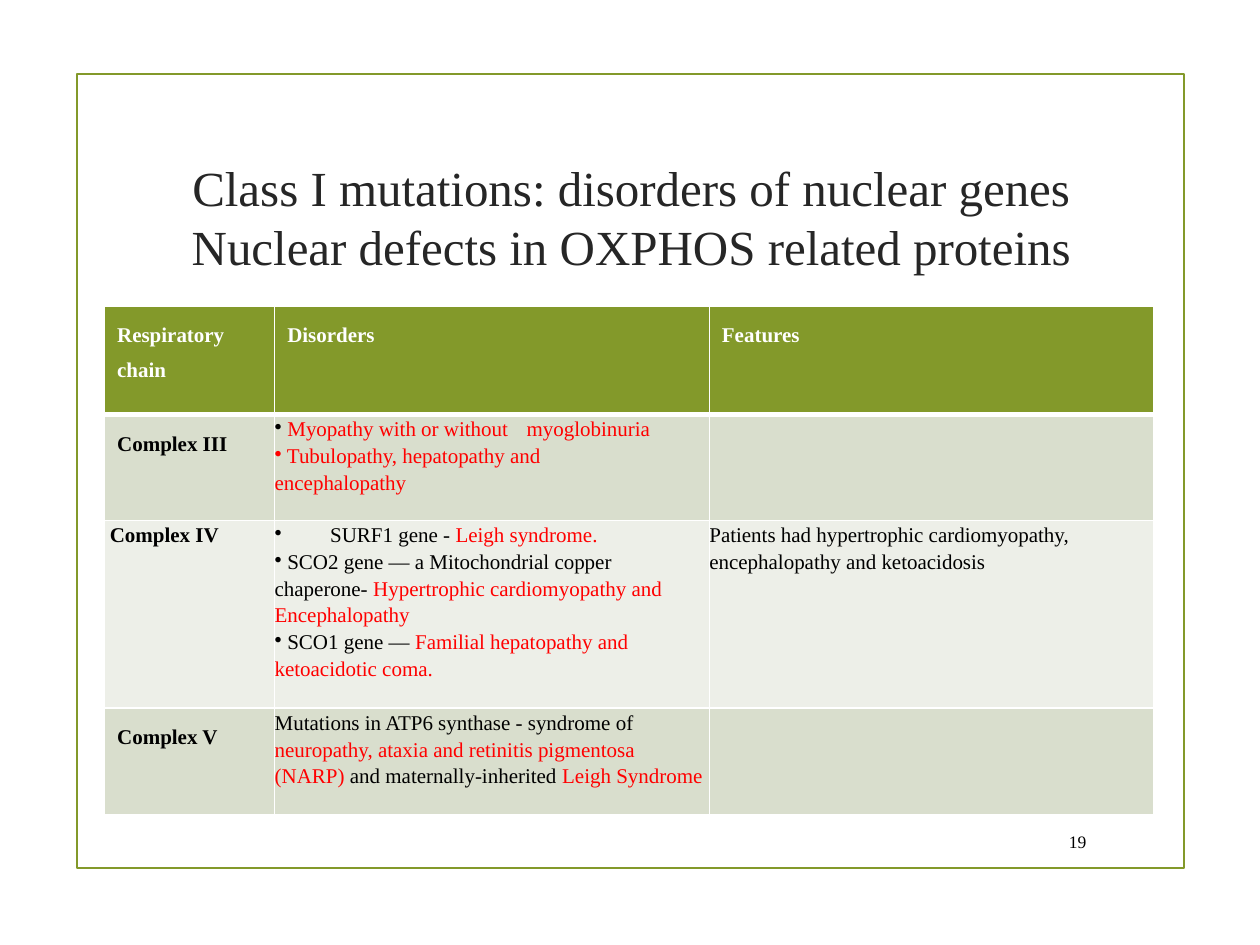
from dataclasses import dataclass
from typing import NamedTuple

from lxml.etree import SubElement
from pptx import Presentation
from pptx.dml.color import RGBColor
from pptx.enum.shapes import MSO_SHAPE as Shape
from pptx.enum.text import MSO_ANCHOR as Anchor, PP_ALIGN as Align
from pptx.oxml.ns import qn
from pptx.util import Inches, Length, Pt


@dataclass(frozen=True)
class Theme:
    font: str = "Times New Roman"
    green: str = "83992A"
    band_dark: str = "D9DECD"
    band_light: str = "EDEFE8"
    white: str = "FFFFFF"
    black: str = "000000"
    red: str = "FF0000"
    title: str = "262626"
    title_size: int = 28
    body_size: int = 12
    number_size: int = 10


THEME = Theme()
WIDTH, HEIGHT = Inches(10), Inches(7.5)


class Area(NamedTuple):
    """A rectangle in percent of the slide's width and height."""
    left: float
    top: float
    width: float
    height: float


class Span(NamedTuple):
    text: str
    color: str = THEME.black


class Line(NamedTuple):
    spans: list[Span]
    bullet: bool = False
    hang: float = 0  # percent of the slide's width


class Entry(NamedTuple):
    lines: list[Line]
    bold: bool = False
    spacing: float = 1.15
    tight: bool = True


class Row(NamedTuple):
    height: float
    fill: str
    entries: list[Entry]
    rule: float = 1  # width of the bottom border


def across(share: float) -> Length:
    return Length(round(WIDTH * share / 100))


def down(share: float) -> Length:
    return Length(round(HEIGHT * share / 100))


def place(area: Area) -> tuple[Length, ...]:
    return across(area.left), down(area.top), across(area.width), down(area.height)


def plain(text: str, color: str = THEME.black, bullet: bool = False) -> Line:
    return Line([Span(text, color)], bullet)


def label(text: str, color: str = THEME.black) -> Entry:
    return Entry([plain(text, color)], bold=True, spacing=1.5, tight=False)


def gene(name: str, disorder: str, hang: float = 0) -> Line:
    return Line([Span(name), Span(disorder, THEME.red)], True, hang)


def write(frame, lines: list[Line], *, size: float, bold: bool = False,
          align=Align.LEFT, spacing: float | None = None) -> None:
    for index, line in enumerate(lines):
        para = frame.paragraphs[0] if index == 0 else frame.add_paragraph()
        para.alignment = align
        if spacing:
            para.line_spacing = spacing
        if line.bullet:
            settings = para._p.get_or_add_pPr()
            settings.set("marL", str(across(line.hang)))
            settings.set("indent", str(-across(line.hang)))
            SubElement(settings, qn("a:buChar")).set("char", "•")
        for text, color in line.spans:
            for number, part in enumerate(text.split("\n")):
                if number:
                    para.add_line_break()
                span = para.add_run()
                span.text = part
                span.font.name = THEME.font
                span.font.size = Pt(size)
                span.font.bold = bold
                span.font.color.rgb = RGBColor.from_string(color)


def add_text(page, area: Area, line: Line, **style) -> None:
    box = page.shapes.add_textbox(*place(area))
    box.text_frame.word_wrap = True
    box.text_frame.vertical_anchor = Anchor.MIDDLE
    write(box.text_frame, [line], **style)


def add_borders(cell, top: float, bottom: float) -> None:
    """Borders come before the fill in the cell's properties."""
    settings = cell._tc.get_or_add_tcPr()
    sides = {"a:lnL": 1, "a:lnR": 1, "a:lnT": top, "a:lnB": bottom}
    for index, (tag, width) in enumerate(sides.items()):
        border = SubElement(settings, qn(tag))
        border.set("w", str(Pt(width)))
        fill = SubElement(border, qn("a:solidFill"))
        SubElement(fill, qn("a:srgbClr")).set("val", THEME.white)
        settings.insert(index, border)


def add_table(page, area: Area, columns: list[float], rows: list[Row]) -> None:
    table = page.shapes.add_table(len(rows), len(columns), *place(area)).table
    table.horz_banding = False
    for column, width in zip(table.columns, columns):
        column.width = across(width)
    top = 1.0
    for r, row in enumerate(rows):
        table.rows[r].height = down(row.height)
        for c in range(len(columns)):
            cell = table.cell(r, c)
            cell.fill.solid()
            cell.fill.fore_color.rgb = RGBColor.from_string(row.fill)
            add_borders(cell, top, row.rule)
            if c < len(row.entries):
                entry = row.entries[c]
                if entry.tight:
                    cell.margin_left = cell.margin_right = 0
                    cell.margin_top = cell.margin_bottom = 0
                write(cell.text_frame, entry.lines, size=THEME.body_size,
                      bold=entry.bold, spacing=entry.spacing)
        top = row.rule


COLUMNS = [13.5, 34.5, 35.3]
ROWS = [
    Row(11.47, THEME.green,
        [label(text, THEME.white) for text in ("Respiratory chain", "Disorders", "Features")],
        rule=3),
    Row(11.2, THEME.band_dark, [
        label("Complex III"),
        Entry([gene(" ", "Myopathy with or without \tmyoglobinuria"),
               plain(" Tubulopathy, hepatopathy and \tencephalopathy", THEME.red, bullet=True)]),
    ]),
    Row(19.87, THEME.band_light, [
        Entry([plain(" Complex IV")], bold=True),
        Entry([gene("SURF1 gene - ", "Leigh syndrome.", hang=4.4),
               gene(" SCO2 gene — a Mitochondrial copper chaperone- ",
                    "Hypertrophic cardiomyopathy and"),
               plain("Encephalopathy", THEME.red),
               gene(" SCO1 gene — ", "Familial hepatopathy and ketoacidotic coma.")]),
        Entry([plain("Patients had hypertrophic cardiomyopathy,"),
               plain("encephalopathy and ketoacidosis")]),
    ]),
    Row(11.33, THEME.band_dark, [
        label("Complex V"),
        Entry([Line([Span("Mutations in ATP6 synthase - syndrome of "),
                     Span("neuropathy, ataxia and retinitis pigmentosa (NARP) ", THEME.red),
                     Span("and maternally-inherited "),
                     Span("Leigh Syndrome", THEME.red)])]),
    ]),
]


def main() -> None:
    deck = Presentation()
    deck.slide_width, deck.slide_height = WIDTH, HEIGHT
    page = deck.slides.add_slide(deck.slide_layouts[6])

    # Page frame
    border = page.shapes.add_shape(Shape.RECTANGLE, *place(Area(6.1, 7.87, 87.9, 84)))
    border.shadow.inherit = False
    border.fill.background()
    border.line.color.rgb = RGBColor.from_string(THEME.green)
    border.line.width = Pt(1.25)

    # Title
    title = ("Class I mutations: disorders of nuclear genes\n"
             "Nuclear defects in OXPHOS related proteins")
    add_text(page, Area(12.9, 13.33, 74.4, 19.07), plain(title, THEME.title),
             size=THEME.title_size, align=Align.CENTER)

    # Disorders by respiratory chain complex
    add_table(page, Area(8.3, 32.4, sum(COLUMNS), sum(row.height for row in ROWS)),
              COLUMNS, ROWS)

    # Page number
    add_text(page, Area(82.9, 86.93, 4.3, 4.13), plain("19"),
             size=THEME.number_size, align=Align.RIGHT)

    deck.save("out.pptx")


if __name__ == "__main__":
    main()
